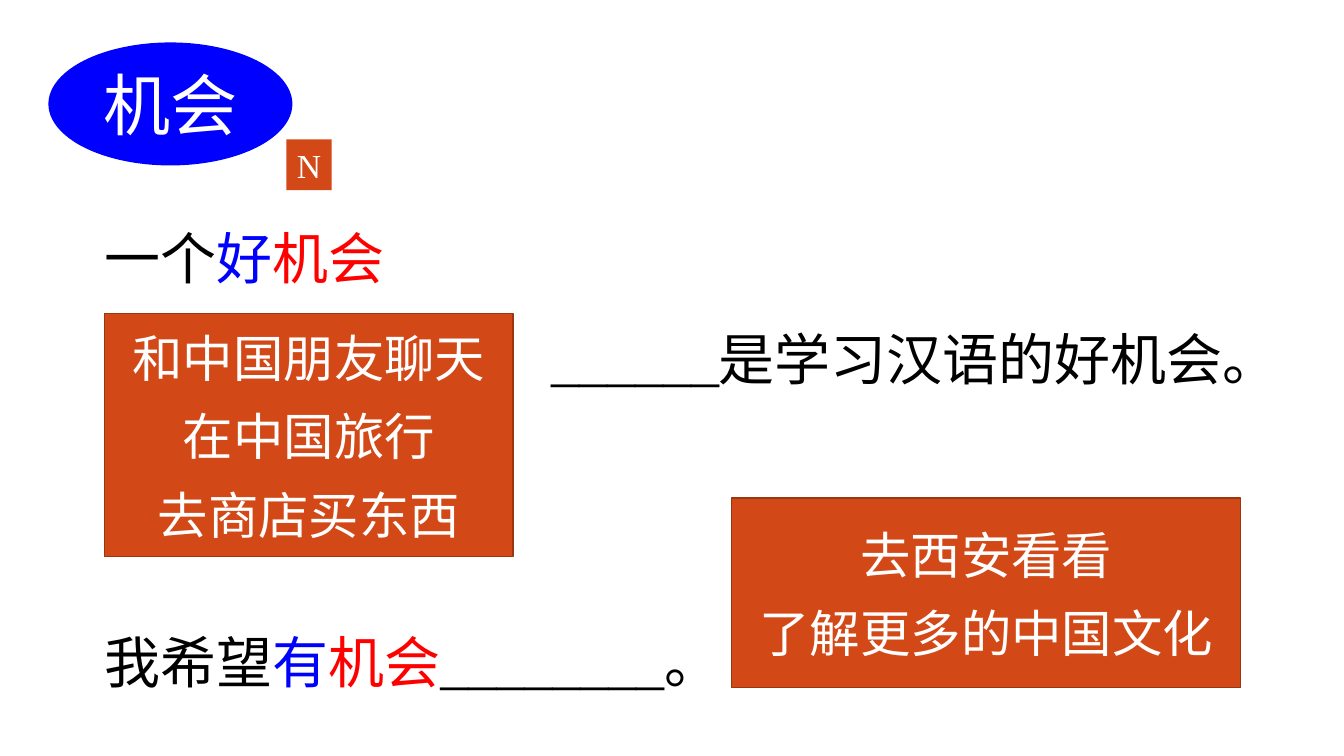
import pptx
import pptx.dml.color
import pptx.enum.shapes
import pptx.enum.text
import pptx.util
from pptx.util import Cm, Pt

SHAPE = pptx.enum.shapes.MSO_SHAPE
ALIGN = pptx.enum.text.PP_ALIGN
ANCHOR = pptx.enum.text.MSO_ANCHOR

SERIF, SANS = "Times New Roman", "Noto Sans CJK SC"
BLACK, WHITE, BLUE, RED = "000000", "FFFFFF", "0000FF", "FF0000"
ORANGE, BROWN = "D34817", "9C3511"


def color(value):
    return pptx.dml.color.RGBColor.from_string(value)


def style_paragraph(paragraph, size, name=SERIF, fill=None):
    paragraph.font.size = Pt(size)
    paragraph.font.name = name
    if fill:
        paragraph.font.color.rgb = color(fill)


def add_block(slide, kind, box, fill, line=None):
    shape = slide.shapes.add_shape(kind, *map(Cm, box))
    shape.shadow.inherit = False
    shape.fill.solid()
    shape.fill.fore_color.rgb = color(fill)
    if line:
        shape.line.color.rgb = color(line)
        shape.line.width = Pt(1)
    else:
        shape.line.fill.background()
    shape.text_frame.vertical_anchor = ANCHOR.MIDDLE
    return shape


# Example sentences, with the key words coloured
def add_sentences(slide, box):
    sentences = [
        (0, 0, [("一个", BLACK), ("好", BLUE), ("机会", RED)]),
        (11.25, 0, [("______是学习汉语的好机会。", BLACK)]),
        (0, 144, [("我希望", BLACK), ("有", BLUE), ("机会", RED), ("________。", BLACK)]),
    ]
    frame = slide.shapes.add_textbox(*map(Cm, box)).text_frame
    frame.word_wrap = True
    for index, (indent, gap, parts) in enumerate(sentences):
        paragraph = frame.paragraphs[0] if index == 0 else frame.add_paragraph()
        paragraph.line_spacing = Pt(72)
        if gap:
            paragraph.space_before = Pt(gap)
        if indent:
            paragraph._p.get_or_add_pPr().set("marL", str(Cm(indent)))
        style_paragraph(paragraph, 40)
        for text, fill in parts:
            run = paragraph.add_run()
            run.text = text
            run.font.color.rgb = color(fill)


# Headword oval with its word class at the lower right
def add_headword(slide, box, word, word_class):
    left, top, width, height = box
    oval = add_block(slide, SHAPE.OVAL, box, BLUE)
    tag_box = (left + width - 0.15, top + height - 0.66, 1.14, 1.28)
    tag = add_block(slide, SHAPE.RECTANGLE, tag_box, ORANGE)
    tag.text_frame.word_wrap = False
    for shape, text, size, name in ((oval, word, 48, SANS), (tag, word_class, 24, SERIF)):
        paragraph = shape.text_frame.paragraphs[0]
        paragraph.text = text
        paragraph.alignment = ALIGN.CENTER
        style_paragraph(paragraph, size, name, WHITE)


# Panel of phrases that can fill a blank
def add_choices(slide, box, choices):
    frame = add_block(slide, SHAPE.RECTANGLE, box, ORANGE, BROWN).text_frame
    for index, choice in enumerate(choices):
        paragraph = frame.paragraphs[0] if index == 0 else frame.add_paragraph()
        paragraph.text = choice
        paragraph.alignment = ALIGN.CENTER
        paragraph.line_spacing = Pt(44)
        if index:
            paragraph.space_before = Pt(12)
        style_paragraph(paragraph, 36, fill=WHITE)


def main():
    presentation = pptx.Presentation()
    presentation.slide_width = Cm(33.87)
    presentation.slide_height = Cm(19.05)
    slide = presentation.slides.add_slide(presentation.slide_layouts[6])

    add_sentences(slide, (2.39, 4.67, 29.85, 13.08))
    add_headword(slide, (1.22, 1.07, 6.15, 3.1), "机会", "N")
    add_choices(slide, (2.64, 7.9, 10.29, 6.12),
                ["和中国朋友聊天", "在中国旅行", "去商店买东西"])
    add_choices(slide, (18.44, 12.55, 12.83, 4.78),
                ["去西安看看", "了解更多的中国文化"])

    presentation.save("out.pptx")


if __name__ == "__main__":
    main()
